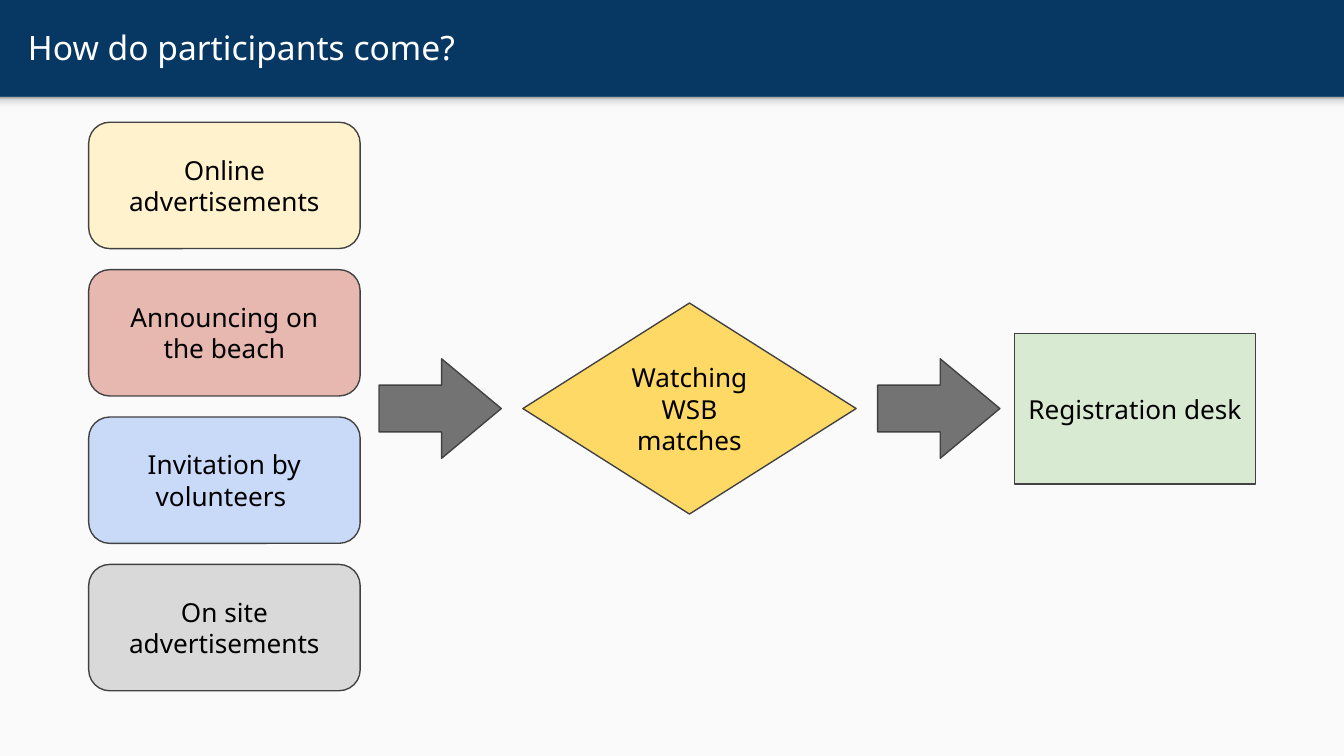
from copy import deepcopy

from pptx import Presentation
from pptx.dml.color import RGBColor
from pptx.enum.shapes import MSO_SHAPE
from pptx.enum.text import MSO_ANCHOR, PP_ALIGN
from pptx.oxml.ns import qn
from pptx.util import Inches, Pt

# Content
TITLE = "How do participants come?"
SOURCES = [
    ("Online advertisements", "FFF2CC"),
    ("Announcing on the beach", "E6B8AF"),
    ("Invitation by volunteers ", "C9DAF8"),
    ("On site advertisements", "D9D9D9"),
]
WATCHING = ("Watching WSB matches", "FFD966")
REGISTRATION = ("Registration desk", "D9EAD3")

# Layout and style
FONT = "Noto Sans"
WIDTH, HEADER = 10, 0.72
HEIGHT = WIDTH * 9 / 16
SOURCE_TOP, SOURCE_BOTTOM, SOURCE_HEIGHT = 0.91, 5.14, 0.94
SOURCE_STEP = (SOURCE_BOTTOM - SOURCE_HEIGHT - SOURCE_TOP) / (len(SOURCES) - 1)
FLOW_MIDDLE = 3.04
ARROW_LEFTS = [2.82, 6.53]
SHADOW_STOPS = [(0, "999999"), (0.2, "DEDEDE"), (0.64, "F9F9F9"), (1, "F9F9F9")]


def color(value):
    return RGBColor.from_string(value)


def write(shape, text, size, text_color, align):
    frame = shape.text_frame
    frame.word_wrap = True
    frame.vertical_anchor = MSO_ANCHOR.MIDDLE
    frame.margin_left = frame.margin_right = Inches(0.1)
    frame.margin_top = frame.margin_bottom = Inches(0.1)
    frame.text = text
    para = frame.paragraphs[0]
    para.alignment = align
    font = para.runs[0].font
    font.name, font.size = FONT, Pt(size)
    font.color.rgb = color(text_color)


def add_box(page, kind, left, top, width, height, fill, line=None, text=None):
    box = page.shapes.add_shape(
        kind, Inches(left), Inches(top), Inches(width), Inches(height))
    box.shadow.inherit = False
    box.fill.solid()
    box.fill.fore_color.rgb = color(fill)
    if line:
        box.line.color.rgb = color(line)
        box.line.width = Pt(0.75)
    else:
        box.line.fill.background()
    if text:
        write(box, text, 14, "000000", PP_ALIGN.CENTER)
    return box


def add_step(page, kind, left, width, height, fill, text=None):
    top = FLOW_MIDDLE - height / 2
    return add_box(page, kind, left, top, width, height, fill, "424242", text)


def shade_downward(box, stops):
    box.fill.gradient()
    box.fill.gradient_angle = 270
    stop_list = box.fill._xPr.find(qn("a:gradFill")).find(qn("a:gsLst"))
    while len(stop_list) < len(stops):
        stop_list.append(deepcopy(stop_list[0]))
    for stop, (position, value) in zip(box.fill.gradient_stops, stops):
        stop.position = position
        stop.color.rgb = color(value)


deck = Presentation()
deck.slide_width, deck.slide_height = Inches(WIDTH), Inches(HEIGHT)
page = deck.slides.add_slide(deck.slide_layouts[6])

# Header colour, body panel and the soft shadow under the header
page.background.fill.solid()
page.background.fill.fore_color.rgb = color("073763")
add_box(page, MSO_SHAPE.RECTANGLE, 0, HEADER, WIDTH, HEIGHT - HEADER, "FAFAFA")
shadow = add_box(page, MSO_SHAPE.RECTANGLE, 0, HEADER, WIDTH, 0.12, "F9F9F9")
shade_downward(shadow, SHADOW_STOPS)

# Title
title = page.shapes.add_textbox(Inches(0.11), Inches(0.02), Inches(9.65), Inches(0.66))
write(title, TITLE, 18, "FFFFFF", PP_ALIGN.LEFT)

# Column of sources
for index, (text, fill) in enumerate(SOURCES):
    top = SOURCE_TOP + index * SOURCE_STEP
    add_box(page, MSO_SHAPE.ROUNDED_RECTANGLE, 0.66, top, 2.02, SOURCE_HEIGHT,
            fill, "424242", text)

# Flow from the sources to the registration desk
for left in ARROW_LEFTS:
    arrow = add_step(page, MSO_SHAPE.RIGHT_ARROW, left, 0.91, 0.74, "737373")
    arrow.adjustments[0], arrow.adjustments[1] = 0.47, 0.6
text, fill = WATCHING
add_step(page, MSO_SHAPE.FLOWCHART_DECISION, 3.89, 2.48, 1.57, fill, text)
text, fill = REGISTRATION
add_step(page, MSO_SHAPE.FLOWCHART_PROCESS, 7.55, 1.79, 1.12, fill, text)

deck.save("out.pptx")
